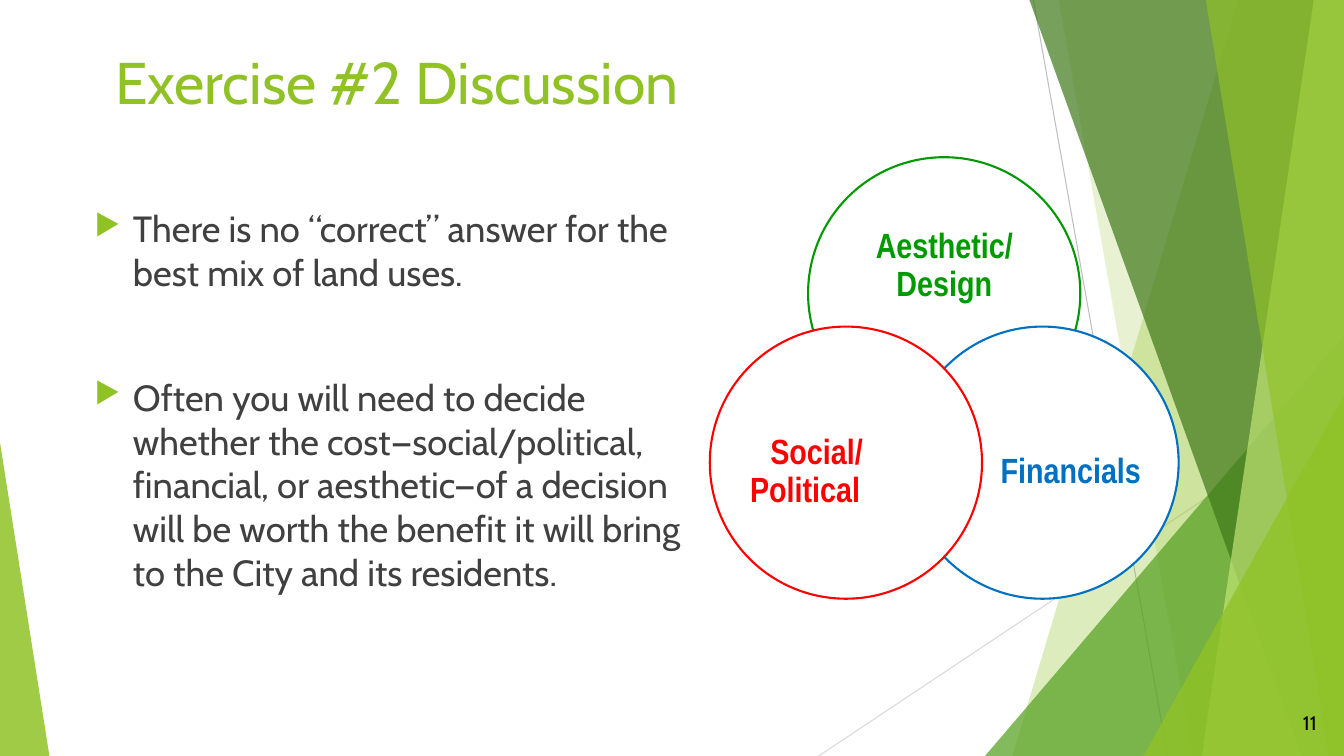
from lxml import etree
from pptx import Presentation
from pptx.dml.color import RGBColor
from pptx.enum.shapes import MSO_CONNECTOR, MSO_SHAPE
from pptx.enum.text import MSO_ANCHOR, PP_ALIGN
from pptx.oxml.ns import qn
from pptx.util import Inches, Pt

W, H = 13.33, 7.5
LIME, GREEN, DARK, PALE = "90C226", "54A021", "3F7819", "C0E474"
FONT, LABEL_FONT = "Cabin", "Arial Narrow"


def color(value):
    return RGBColor.from_string(value)


def inches(*values):
    return [Inches(v) for v in values]


def paint(sp, fill, alpha=100, line=None, width=1.5):
    """Fill a shape, with opacity in percent and an optional outline."""
    sp.shadow.inherit = False
    sp.fill.solid()
    sp.fill.fore_color.rgb = color(fill)
    if alpha < 100:
        clr = sp.fill._xPr.find(qn("a:solidFill"))[0]
        etree.SubElement(clr, qn("a:alpha")).set("val", str(alpha * 1000))
    if line:
        sp.line.color.rgb = color(line)
        sp.line.width = Pt(width)
    else:
        sp.line.fill.background()


def write(tf, *texts, size, ink, font=FONT, bold=False, align=PP_ALIGN.LEFT,
          anchor=MSO_ANCHOR.TOP, inset=None, spacing=1.0, before=0,
          left=0, indent=0, bullet=None):
    """Write one paragraph per text; left and indent are in inches."""
    tf.word_wrap = True
    tf.vertical_anchor = anchor
    if inset is not None:
        tf.margin_left = tf.margin_right = Inches(inset)
        tf.margin_top = tf.margin_bottom = Inches(inset)
    for i, text in enumerate(texts):
        p = tf.add_paragraph() if i else tf.paragraphs[0]
        p.alignment, p.line_spacing = align, spacing
        p.space_before = Pt(before if i else 0)
        pPr = p._p.get_or_add_pPr()
        pPr.set("marL", str(Inches(left)))
        pPr.set("indent", str(Inches(indent)))
        if bullet:
            clr = etree.SubElement(pPr, qn("a:buClr"))
            etree.SubElement(clr, qn("a:srgbClr")).set("val", LIME)
            etree.SubElement(pPr, qn("a:buSzPct")).set("val", "80000")
            etree.SubElement(pPr, qn("a:buChar")).set("char", bullet)
        r = p.add_run()
        r.text = text
        r.font.name, r.font.size, r.font.bold = font, Pt(size), bold
        r.font.color.rgb = color(ink)


def add_text(s, box, *texts, **fmt):
    write(s.shapes.add_textbox(*inches(*box)).text_frame, *texts, **fmt)


def add_line(s, start, end, ink):
    cn = s.shapes.add_connector(MSO_CONNECTOR.STRAIGHT, *inches(*start, *end))
    cn.line.color.rgb = color(ink)
    cn.line.width = Pt(0.75)
    etree.SubElement(cn._element.spPr, qn("a:effectLst"))


def add_band(s, top, bottom, fill, alpha):
    """A facet from a slanted left edge to the right edge of the slide."""
    fb = s.shapes.build_freeform(*inches(top, 0), scale=1.0)
    fb.add_line_segments([inches(W, 0), inches(W, H), inches(bottom, H)])
    paint(fb.convert_to_shape(), fill, alpha)


def add_corner(s, left, top, width, apex, fill, alpha):
    """A right triangle standing on the bottom edge of the slide."""
    sp = s.shapes.add_shape(MSO_SHAPE.ISOSCELES_TRIANGLE,
                            *inches(left, top, width, H - top))
    sp.adjustments[0] = apex
    paint(sp, fill, alpha)


def add_backdrop(s):
    add_line(s, (10.25, 0), (11.58, H), "BFBFBF")
    add_line(s, (W, 4.03), (8.12, H), "D9D9D9")
    add_band(s, 12.28, 10.04, LIME, 30)
    add_band(s, 10.5, 11.83, LIME, 20)
    add_corner(s, 9.77, 3.33, W - 9.77, 1, GREEN, 72)
    add_band(s, 10.21, 12.91, DARK, 70)
    add_band(s, 13.03, 11.92, PALE, 70)
    add_band(s, 11.96, 13.18, LIME, 65)
    add_corner(s, 11.34, 3.93, W - 11.34, 1, LIME, 80)
    add_corner(s, 0, 4.39, 0.49, 0, LIME, 85)


def add_title(s, box, text):
    sp = s.shapes.title
    sp.left, sp.top, sp.width, sp.height = inches(*box)
    write(sp.text_frame, text, size=42, ink=LIME, align=PP_ALIGN.CENTER)


def add_circles(s, box):
    """Three overlapping circles: one above, two below."""
    x, y, w, h = box
    d = 2.7
    low = h - d
    label = dict(size=25, font=LABEL_FONT, bold=True, spacing=0.9, inset=0,
                 anchor=MSO_ANCHOR.MIDDLE)
    centred = dict(align=PP_ALIGN.CENTER)
    stepped = dict(left=0.15, indent=0.2)
    # circle offset, label box within the circle, text, colour, format
    circles = [
        ((w - d) / 2, 0, (0.36, 0.47, 1.98, 1.22),
         "Aesthetic/ Design", "009900", centred),
        (w - d, low, (0.82, 0.7, 1.62, 1.49),
         "Financials", "0070C0", centred),
        (0, low, (0.25, 0.7, 1.62, 1.49),
         "Social/ Political", "FF0000", stepped),
    ]
    for dx, dy, (lx, ly, lw, lh), text, ink, layout in circles:
        cx, cy = x + dx, y + dy
        sp = s.shapes.add_shape(MSO_SHAPE.OVAL, *inches(cx, cy, d, d))
        paint(sp, "FFFFFF", line=ink)
        add_text(s, (cx + lx, cy + ly, lw, lh), text, ink=ink,
                 **label, **layout)


def main():
    prs = Presentation()
    prs.slide_width, prs.slide_height = inches(W, H)
    s = prs.slides.add_slide(prs.slide_layouts[5])
    add_backdrop(s)
    add_title(s, (0.84, 0.4, 6.19, 0.78), "Exercise #2 Discussion")
    # Discussion points
    add_text(s, (0.84, 2, 6.09, 4.8),
             "There is no “correct” answer for the best mix of land uses.",
             "Often you will need to decide whether the cost—social/political, "
             "financial, or aesthetic—of a decision will be worth the benefit "
             "it will bring to the City and its residents.",
             size=26, ink="404040", before=58, left=0.38, indent=-0.38,
             bullet="▶")
    add_circles(s, (7.04, 1.56, 4.65, 4.38))
    # Slide number
    add_text(s, (12.41, 6.97, 0.75, 0.4), "11", size=14, ink="000000",
             align=PP_ALIGN.RIGHT, anchor=MSO_ANCHOR.MIDDLE)
    prs.save("out.pptx")


if __name__ == "__main__":
    main()
